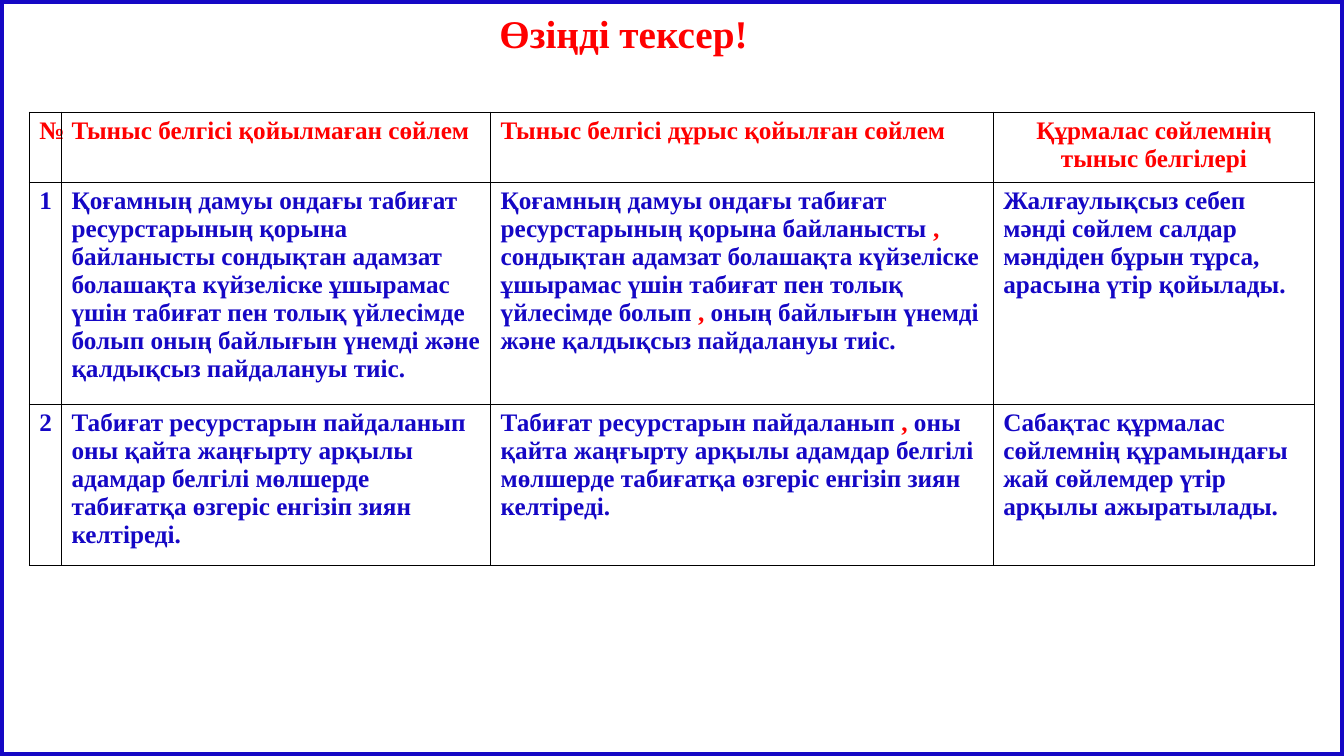
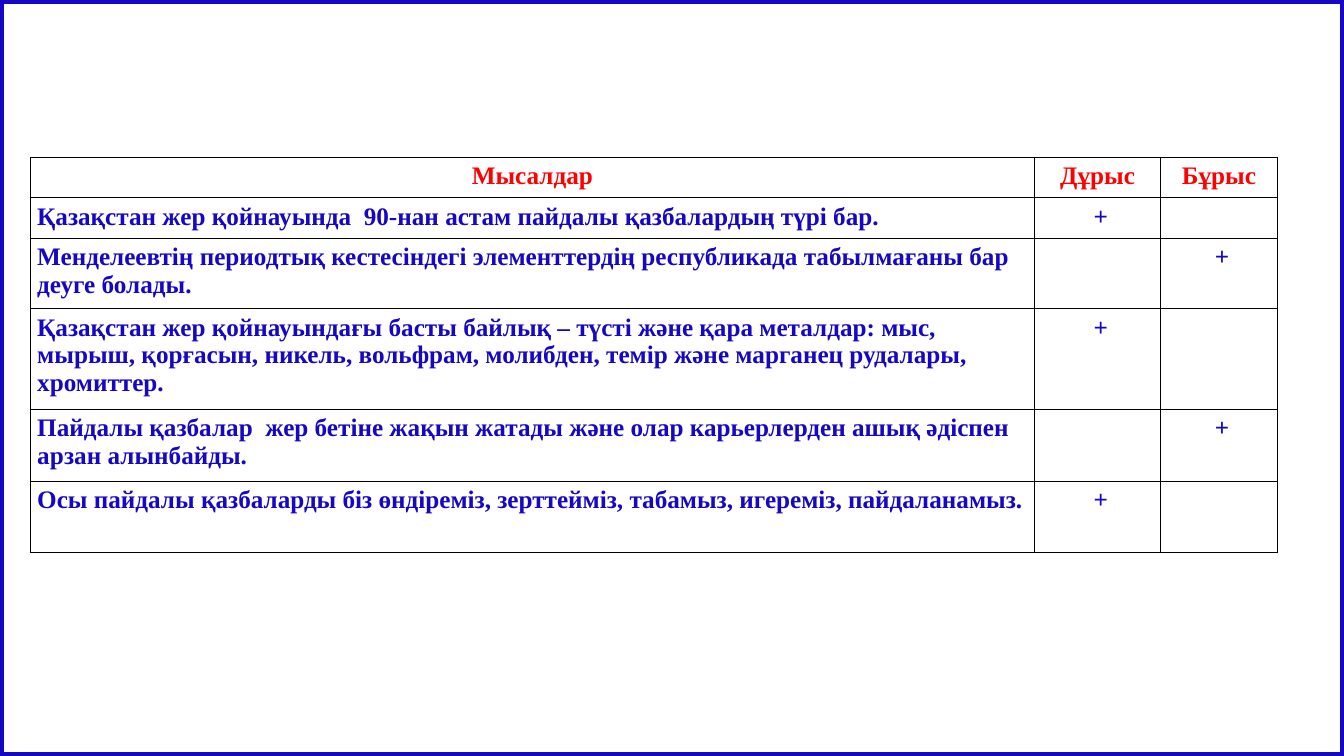
from dataclasses import dataclass

from lxml import etree
from pptx import Presentation
from pptx.dml.color import RGBColor
from pptx.enum.shapes import MSO_SHAPE
from pptx.enum.text import MSO_AUTO_SIZE, PP_ALIGN
from pptx.oxml.ns import qn
from pptx.util import Inches, Pt

RECTANGLE = MSO_SHAPE.RECTANGLE
GROW = MSO_AUTO_SIZE.SHAPE_TO_FIT_TEXT
LEFT, CENTER = PP_ALIGN.LEFT, PP_ALIGN.CENTER
WIDTH, HEIGHT = 13.34, 7.5


@dataclass(frozen=True)
class Theme:
    font: str = "Times New Roman"
    paper: str = "FFFFFF"
    ink: str = "1507C5"
    accent: str = "FF0000"
    rule: str = "000000"
    title_size: float = 28
    body_size: float = 18
    frame_width: float = 6
    rule_width: float = 0.45


THEME = Theme()
ACCENT_MARK = "|"
PLUS = " +"

SLIDES = [
    {
        "title": "Өзіңді тексер!",
        "title_at": (4.86, 0.04, 2.67, 0.57),
        "table_at": (0.29, 1.11),
        "columns": [0.32, 4.26, 4.99, 3.19],
        "rows": [0.7, 2.2, 1.6],
        "side_inset": 0.1,
        "head_align": [CENTER, LEFT, LEFT, CENTER],
        "body_align": [CENTER, LEFT, LEFT, LEFT],
        "cells": [
            ["№", "Тыныс белгісі қойылмаған сөйлем",
             "Тыныс белгісі дұрыс қойылған сөйлем",
             "Құрмалас сөйлемнің тыныс белгілері"],
            ["1",
             "Қоғамның дамуы ондағы табиғат ресурстарының қорына байланысты "
             "сондықтан адамзат болашақта күйзеліске ұшырамас үшін табиғат пен "
             "толық үйлесімде болып оның байлығын үнемді және қалдықсыз "
             "пайдалануы тиіс.",
             "Қоғамның дамуы ондағы табиғат ресурстарының қорына байланысты "
             "|, |сондықтан адамзат болашақта күйзеліске ұшырамас үшін табиғат "
             "пен толық үйлесімде болып |, |оның байлығын үнемді және "
             "қалдықсыз пайдалануы тиіс.",
             "Жалғаулықсыз себеп мәнді сөйлем салдар мәндіден бұрын тұрса, "
             "арасына үтір қойылады."],
            ["2",
             "Табиғат ресурстарын пайдаланып оны қайта жаңғырту арқылы адамдар "
             "белгілі мөлшерде табиғатқа өзгеріс енгізіп зиян келтіреді.",
             "Табиғат ресурстарын пайдаланып |, |оны қайта жаңғырту арқылы "
             "адамдар белгілі мөлшерде табиғатқа өзгеріс енгізіп зиян "
             "келтіреді.",
             "Сабақтас құрмалас сөйлемнің құрамындағы жай сөйлемдер үтір "
             "арқылы ажыратылады."],
        ],
    },
    {
        "table_at": (0.3, 1.56),
        "columns": [9.97, 1.25, 1.16],
        "rows": [0.4, 0.4, 0.7, 1.0, 0.71, 0.71],
        "side_inset": 0.07,
        "head_align": [CENTER, CENTER, CENTER],
        "body_align": [LEFT, CENTER, CENTER],
        "cells": [
            ["Мысалдар", "Дұрыс", "Бұрыс"],
            ["Қазақстан жер қойнауында  90-нан астам пайдалы қазбалардың түрі "
             "бар.", PLUS, ""],
            ["Менделеевтің периодтық кестесіндегі элементтердің республикада "
             "табылмағаны бар деуге болады.", "", PLUS],
            ["Қазақстан жер қойнауындағы басты байлық – түсті және қара "
             "металдар: мыс, мырыш, қорғасын, никель, вольфрам, молибден, "
             "темір және марганец рудалары, хромиттер.", PLUS, ""],
            ["Пайдалы қазбалар  жер бетіне жақын жатады және олар карьерлерден "
             "ашық әдіспен арзан алынбайды.", "", PLUS],
            ["Осы пайдалы қазбаларды біз өндіреміз, зерттейміз, табамыз, "
             "игереміз, пайдаланамыз.", PLUS, ""],
        ],
    },
]


def color(value):
    return RGBColor.from_string(value)


def write(para, text, size, ink, align=LEFT):
    para.alignment = align
    for index, part in enumerate(text.split(ACCENT_MARK)):
        if part:
            span = para.add_run()
            span.text = part
            span.font.name = THEME.font
            span.font.size = Pt(size)
            span.font.bold = True
            span.font.color.rgb = color(THEME.accent if index % 2 else ink)


def add_frame(page):
    frame = page.shapes.add_shape(
        RECTANGLE, 0, 0, Inches(WIDTH), Inches(HEIGHT))
    frame.shadow.inherit = False
    frame.fill.solid()
    frame.fill.fore_color.rgb = color(THEME.paper)
    frame.line.color.rgb = color(THEME.ink)
    frame.line.width = Pt(THEME.frame_width)


def add_title(page, text, place):
    box = page.shapes.add_textbox(*map(Inches, place))
    box.text_frame.word_wrap = False
    box.text_frame.auto_size = GROW
    write(box.text_frame.paragraphs[0], text, THEME.title_size, THEME.accent)


def add_borders(cell):
    properties = cell._tc.get_or_add_tcPr()
    for position, side in enumerate(("lnL", "lnR", "lnT", "lnB")):
        line = etree.Element(qn(f"a:{side}"), w=str(Pt(THEME.rule_width)))
        fill = etree.SubElement(line, qn("a:solidFill"))
        etree.SubElement(fill, qn("a:srgbClr"), val=THEME.rule)
        properties.insert(position, line)


def add_table(page, content):
    columns, rows = content["columns"], content["rows"]
    left, top = content["table_at"]
    table = page.shapes.add_table(
        len(rows), len(columns), Inches(left), Inches(top),
        Inches(sum(columns)), Inches(sum(rows))).table
    table.first_row = table.horz_banding = False
    for column, width in zip(table.columns, columns):
        column.width = Inches(width)
    for number, (row, height) in enumerate(zip(table.rows, rows)):
        row.height = Inches(height)
        aligns = content["body_align" if number else "head_align"]
        ink = THEME.ink if number else THEME.accent
        for cell, text, align in zip(row.cells, content["cells"][number], aligns):
            cell.margin_left = cell.margin_right = Inches(content["side_inset"])
            cell.fill.background()
            add_borders(cell)
            write(cell.text_frame.paragraphs[0], text, THEME.body_size, ink, align)


def main():
    deck = Presentation()
    deck.slide_width, deck.slide_height = Inches(WIDTH), Inches(HEIGHT)
    for content in SLIDES:
        page = deck.slides.add_slide(deck.slide_layouts[6])
        add_frame(page)
        add_table(page, content)
        if "title" in content:
            add_title(page, content["title"], content["title_at"])
    deck.save("out.pptx")


if __name__ == "__main__":
    main()
